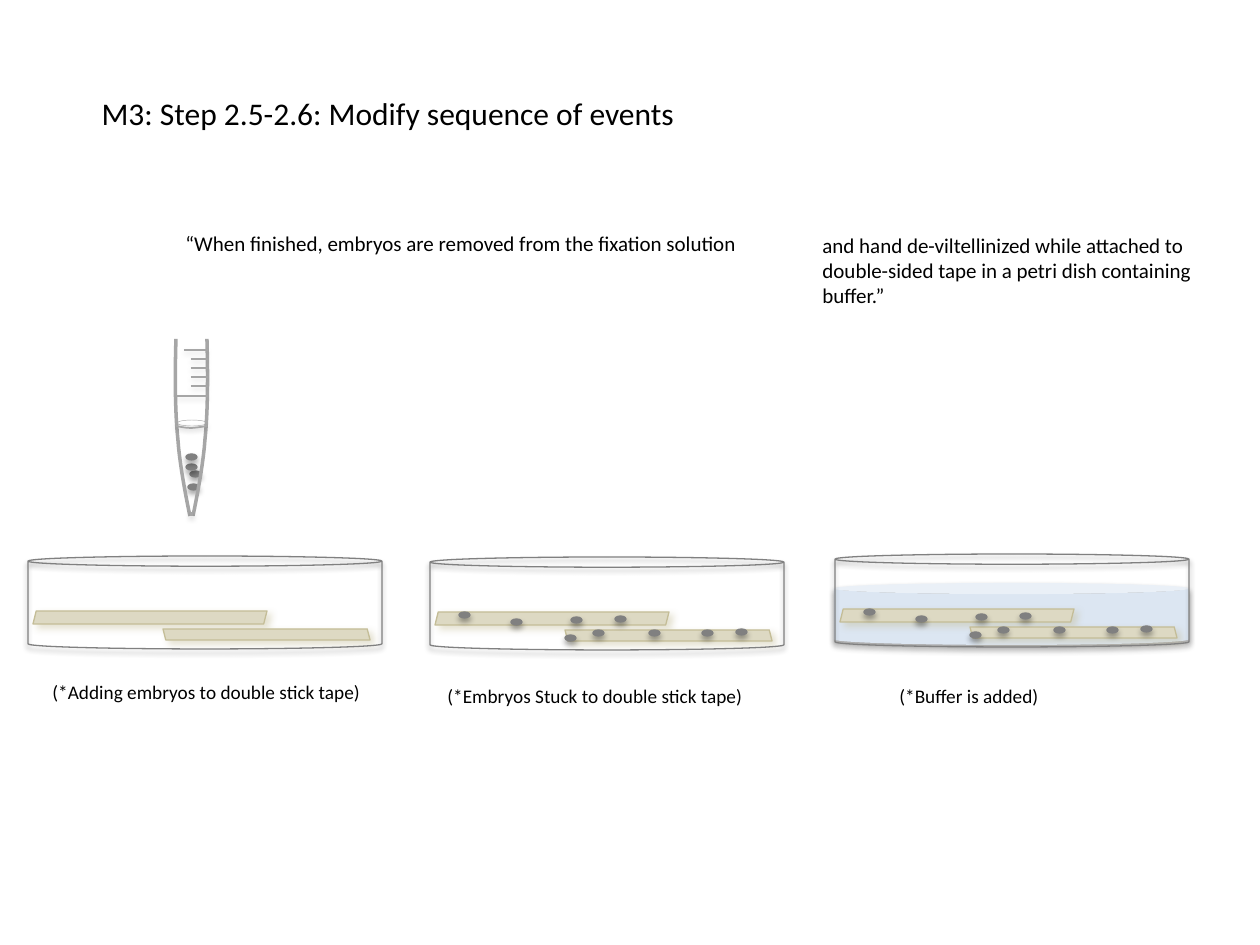
from dataclasses import dataclass

from lxml.etree import SubElement
from pptx import Presentation
from pptx.dml.color import RGBColor
from pptx.enum.shapes import MSO_CONNECTOR as Connector, MSO_SHAPE as Preset
from pptx.enum.text import MSO_ANCHOR as Anchor, MSO_AUTO_SIZE as AutoSize, PP_ALIGN as Align
from pptx.oxml.ns import qn
from pptx.util import Emu, Inches, Pt

PX_PER_INCH = 126


@dataclass(frozen=True)
class Shadow:
    color: str
    alpha: int
    blur: float
    distance: float
    angle: int


@dataclass(frozen=True)
class Theme:
    font: str = "Calibri"
    ink: str = "000000"
    outline: str = "808080"
    glass: str = "A6A6A6"
    tape: str = "DDD9C3"
    tape_edge: str = "C4BD97"
    buffer: str = "DCE6F2"
    title_size: int = 18
    quote_size: int = 12
    caption_size: int = 11
    soft: Shadow = Shadow("000000", 35, 3.1, 1.8, 90)
    faint: Shadow = Shadow("000000", 11, 3.1, 1.6, 90)
    meniscus: Shadow = Shadow("000000", 27, 3.1, 1, 90)
    tape_shadow: Shadow = Shadow("C4BD97", 43, 4, 3, 45)


THEME = Theme()

# Offsets from the top left corner of a dish or of the tube
STUCK_EMBRYOS = [(163, 73), (185, 59), (219, 73), (29, 55), (306, 72),
                 (81, 62), (135, 78), (272, 73), (141, 60)]
TUBE_EMBRYOS = [(15, 132), (11, 125), (13, 145), (11, 115)]
TUBE_MARKS = [(1, 57), (16, 47), (16, 38), (16, 29), (16, 20), (9, 11)]
TUBE_WALL = [(1, 0), (0, 37), (0, 72), (3, 101), (5, 131), (15, 177), (15, 177)]
LIQUID_EDGE = [(1, 87), (6, 88), (11, 89), (16, 89), (21, 89), (32, 87), (32, 87)]


def px(length):
    return Emu(round(length * Inches(1) / PX_PER_INCH))


def rgb(color):
    return RGBColor.from_string(color)


def set_shadow(shape, shadow):
    """Replace the theme shadow; None leaves the shape without one."""
    effects = SubElement(shape.element.spPr, qn("a:effectLst"))
    if shadow is None:
        return
    outer = SubElement(effects, qn("a:outerShdw"), blurRad=str(Pt(shadow.blur)),
                       dist=str(Pt(shadow.distance)), dir=str(shadow.angle * 60000),
                       rotWithShape="0")
    color = SubElement(outer, qn("a:srgbClr"), val=shadow.color)
    SubElement(color, qn("a:alpha"), val=str(shadow.alpha * 1000))


def style(shape, fill=None, line=None, weight=0.75, shadow=None):
    if fill:
        shape.fill.solid()
        shape.fill.fore_color.rgb = rgb(fill)
    else:
        shape.fill.background()
    if line:
        shape.line.color.rgb = rgb(line)
        shape.line.width = Pt(weight)
    else:
        shape.line.fill.background()
    set_shadow(shape, shadow)


def add_preset(shapes, preset, left, top, width, height, **look):
    shape = shapes.add_shape(preset, px(left), px(top), px(width), px(height))
    style(shape, **look)
    return shape


def add_line(shapes, start_x, end_x, y, weight, shadow):
    line = shapes.add_connector(Connector.STRAIGHT, px(start_x), px(y), px(end_x), px(y))
    line.line.color.rgb = rgb(THEME.glass)
    line.line.width = Pt(weight)
    set_shadow(line, shadow)


def bezier_points(controls, steps=12):
    """Sample a chain of cubic curves that share their end points."""
    points = [controls[0]]
    for first in range(0, len(controls) - 1, 3):
        a, b, c, d = controls[first:first + 4]
        for step in range(1, steps + 1):
            t = step / steps
            s = 1 - t
            points.append(tuple(s**3 * p + 3 * s * s * t * q + 3 * s * t * t * r + t**3 * u
                                for p, q, r, u in zip(a, b, c, d)))
    return points


def add_curve(shapes, left, top, controls, weight, shadow=None):
    points = [(px(left + x), px(top + y)) for x, y in bezier_points(controls)]
    builder = shapes.build_freeform(*points[0])
    builder.add_line_segments(points[1:], close=False)
    style(builder.convert_to_shape(), line=THEME.glass, weight=weight, shadow=shadow)


def add_embryos(shapes, left, top, offsets):
    for x, y in offsets:
        add_preset(shapes, Preset.OVAL, left + x, top + y, 11, 6,
                   fill=THEME.outline, line=THEME.outline, shadow=THEME.soft)


def add_tube(slide, left, top, width=33):
    """Draw the tapered tube with its marks, liquid surface and embryos."""
    shapes = slide.shapes.add_group_shape().shapes
    add_embryos(shapes, left, top, TUBE_EMBRYOS)
    right_wall = [(width - x, y) for x, y in TUBE_WALL]
    for wall in (right_wall, TUBE_WALL):
        add_curve(shapes, left, top, wall, 2)
    add_line(shapes, left + 15, left + 18, top + 175, 2, THEME.soft)
    add_curve(shapes, left, top, LIQUID_EDGE, 1, THEME.meniscus)
    add_preset(shapes, Preset.OVAL, left + 2, top + 81, 30, 6, line=THEME.glass, weight=0.25)
    for start, y in TUBE_MARKS:
        add_line(shapes, left + start, left + width, top + y, 1.25, THEME.faint)


def add_dish(slide, left, top, embryos=(), buffer=False):
    shapes = slide.shapes.add_group_shape().shapes
    if buffer:
        liquid = add_preset(shapes, Preset.CAN, left - 1, top + 29, 355, 62,
                            fill=THEME.buffer, shadow=THEME.soft)
        liquid.adjustments[0] = 0.18
    tape_look = dict(fill=THEME.tape, line=THEME.tape_edge, shadow=THEME.tape_shadow)
    add_preset(shapes, Preset.PARALLELOGRAM, left + 5, top + 55, 234, 13, **tape_look)
    lower_tape = add_preset(shapes, Preset.PARALLELOGRAM, left + 135, top + 73, 207, 11,
                            **tape_look)
    lower_tape.element.spPr.find(qn("a:xfrm")).set("flipV", "1")
    add_embryos(shapes, left, top, embryos)
    wall = add_preset(shapes, Preset.CAN, left, top, 354, 93,
                      line=THEME.outline, shadow=THEME.soft)
    wall.adjustments[0] = 0.11


def write(box, text, size):
    frame = box.text_frame
    frame.text = text
    frame.word_wrap = False
    frame.auto_size = AutoSize.SHAPE_TO_FIT_TEXT
    frame.vertical_anchor = Anchor.TOP
    for paragraph in frame.paragraphs:
        paragraph.alignment = Align.LEFT
        for run in paragraph.runs:
            run.font.name = THEME.font
            run.font.size = Pt(size)
            run.font.color.rgb = rgb(THEME.ink)


def add_text(slide, left, top, width, height, text, size):
    box = slide.shapes.add_textbox(px(left), px(top), px(width), px(height))
    write(box, text, size)


def place_title(slide, left, top, width, height, text):
    title = slide.shapes.title
    title.left, title.top, title.width, title.height = map(px, (left, top, width, height))
    write(title, text, THEME.title_size)


def main():
    deck = Presentation()
    deck.slide_width, deck.slide_height = Inches(10), Inches(7.5)
    slide = deck.slides.add_slide(deck.slide_layouts[5])

    place_title(slide, 89, 88, 604, 50, "M3: Step 2.5-2.6: Modify sequence of events")
    add_text(slide, 173, 224, 582, 63,
             "“When finished, embryos are removed from the fixation solution", THEME.quote_size)
    add_text(slide, 810, 226, 398, 115,
             "and hand de-viltellinized while attached to\n"
             "double-sided tape in a petri dish containing\nbuffer.”", THEME.quote_size)

    add_tube(slide, 175, 339)
    add_dish(slide, 28, 556)
    add_dish(slide, 430, 557, STUCK_EMBRYOS)
    add_dish(slide, 835, 554, STUCK_EMBRYOS, buffer=True)

    for left, top, width, caption in [
        (40, 674, 335, "(*Adding embryos to double stick tape)"),
        (435, 678, 323, "(*Embryos Stuck to double stick tape)"),
        (887, 678, 165, "(*Buffer is added)"),
    ]:
        add_text(slide, left, top, width, 37, caption, THEME.caption_size)

    deck.save("out.pptx")


if __name__ == "__main__":
    main()
